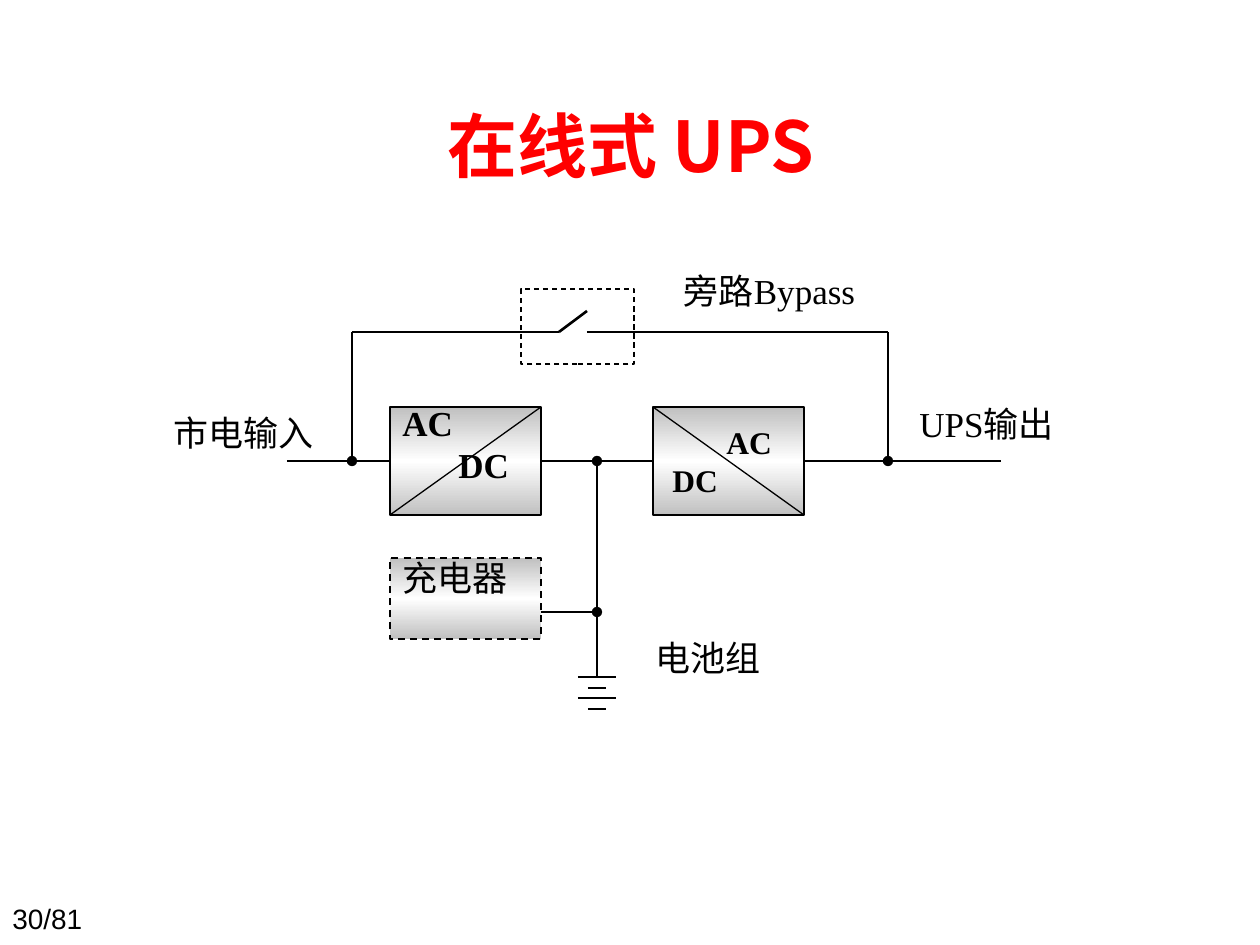
import copy
from dataclasses import dataclass

import pptx
import pptx.dml.color
import pptx.enum.dml
import pptx.enum.shapes
import pptx.enum.text
import pptx.oxml.ns
import pptx.oxml.xmlchemy
import pptx.util
from lxml import etree

EMU_PER_PX = 914400 / 126
ALIGN = pptx.enum.text.PP_ALIGN
ANCHOR = pptx.enum.text.MSO_ANCHOR
qn = pptx.oxml.ns.qn


@dataclass(frozen=True)
class Theme:
    """Colours, fonts, type sizes and line widths of the slide."""
    ink: str = "000000"
    title: str = "FF0000"
    shade: str = "C0C0C0"
    light: str = "FFFFFF"
    serif: str = "Times New Roman"
    sans: str = "Lato"
    cjk: str = "Noto Sans CJK SC"
    number: str = "Arial"
    title_size: int = 40
    label_size: int = 20
    inverter_size: int = 18
    number_size: int = 16
    thin: float = 0.75
    medium: float = 1
    thick: float = 1.5


THEME = Theme()


def px(value):
    """Turn pixels into EMU."""
    return pptx.util.Emu(round(value * EMU_PER_PX))


def color(value):
    """Return an RGB colour."""
    return pptx.dml.color.RGBColor.from_string(value)


def add_run(paragraph, text, font, size, bold=False, ink=THEME.ink):
    """Add one formatted run to a paragraph."""
    run = paragraph.add_run()
    run.text = text
    run.font.size = pptx.util.Pt(size)
    run.font.bold = bold
    run.font.color.rgb = color(ink)
    run.font.name = font
    east_asian = etree.SubElement(run.font._element, qn("a:ea"))
    east_asian.set("typeface", THEME.cjk)


def add_label(slide, box, runs, size=THEME.label_size, align=ALIGN.LEFT,
              anchor=ANCHOR.MIDDLE, wrap=True, **style):
    """Add a text box holding one paragraph of (text, font) runs."""
    frame = slide.shapes.add_textbox(*map(px, box)).text_frame
    frame.word_wrap = wrap
    frame.vertical_anchor = anchor
    paragraph = frame.paragraphs[0]
    paragraph.alignment = align
    for text, font in runs:
        add_run(paragraph, text, font, size, **style)


def style_line(line, width, dashed=False):
    """Set the colour, width and dash of a line."""
    line.color.rgb = color(THEME.ink)
    line.width = pptx.util.Pt(width)
    if dashed:
        line.dash_style = pptx.enum.dml.MSO_LINE.DASH


def add_wire(slide, start, end, width=THEME.thin, dot=None):
    """Add a straight wire, with a junction dot at headEnd or tailEnd."""
    connector = slide.shapes.add_connector(
        pptx.enum.shapes.MSO_CONNECTOR.STRAIGHT, *map(px, start + end))
    style_line(connector.line, width)
    properties = connector._element.spPr
    if dot:
        etree.SubElement(properties.find(qn("a:ln")), qn(f"a:{dot}")).set("type", "oval")
    etree.SubElement(properties, qn("a:effectLst"))


def fill_metallic(shape):
    """Fill a shape with a vertical grey, white, grey gradient."""
    shape.fill.gradient()
    shape.fill.gradient_angle = 270
    stop_list = shape._element.spPr.find(qn("a:gradFill")).find(qn("a:gsLst"))
    stop_list.append(copy.deepcopy(stop_list[0]))
    stops = ((0, THEME.shade), (0.5, THEME.light), (1, THEME.shade))
    for stop, (position, value) in zip(shape.fill.gradient_stops, stops):
        stop.position = position
        stop.color.rgb = color(value)


def add_block(slide, box, width, lines=(), size=THEME.label_size, bold=False,
              dashed=False, filled=True, bottom=6):
    """Add a rectangle with (text, indent) lines."""
    shape = slide.shapes.add_shape(
        pptx.enum.shapes.MSO_SHAPE.RECTANGLE, *map(px, box))
    shape.shadow.inherit = False
    if filled:
        fill_metallic(shape)
    else:
        shape.fill.background()
    style_line(shape.line, width, dashed)
    frame = shape.text_frame
    frame.vertical_anchor = ANCHOR.MIDDLE
    frame.margin_top = px(0 if bottom > 6 else 6)
    frame.margin_bottom = px(bottom)
    for index, (text, indent) in enumerate(lines):
        paragraph = frame.add_paragraph() if index else frame.paragraphs[0]
        paragraph.alignment = ALIGN.LEFT
        paragraph._p.get_or_add_pPr().set("marL", str(px(indent)))
        add_run(paragraph, text, THEME.serif, size, bold)


def add_battery(slide, center, top):
    """Add the four alternating plates of the battery."""
    plates = ((19, THEME.thin), (9, THEME.thick)) * 2
    for index, (half, width) in enumerate(plates):
        y = top + round(index * 10.7)
        add_wire(slide, (center - half, y), (center + half, y), width)


def add_circuit(slide):
    """Add the converters, bypass, charger and wires."""
    main_y, bypass_y, charger_y, battery_y = 461, 332, 612, 677
    input_x, bus_x, output_x = 352, 597, 888
    left, right, top, width, height = 390, 653, 407, 151, 108
    bottom = top + height

    add_block(slide, (left, top, width, height), THEME.thick,
              (("AC", 0), ("DC", 56)), bold=True, bottom=36)
    add_wire(slide, (left, bottom), (left + width, top))
    add_block(slide, (right, top, width, height), THEME.thick,
              (("AC", 61), ("DC", 7)), THEME.inverter_size, bold=True)
    add_wire(slide, (right + width, bottom), (right, top))

    for start, end in ((287, left), (left + width, right), (right + width, 1001)):
        add_wire(slide, (start, main_y), (end, main_y))
    for x in (input_x, output_x):
        add_wire(slide, (x, main_y), (x, bypass_y), dot="headEnd")

    add_wire(slide, (input_x, bypass_y), (559, bypass_y))
    add_wire(slide, (587, 311), (559, bypass_y), THEME.thick)
    add_wire(slide, (587, bypass_y), (output_x, bypass_y))
    add_block(slide, (521, 289, 113, 75), THEME.thin, dashed=True, filled=False)

    add_wire(slide, (bus_x, main_y), (bus_x, battery_y), dot="headEnd")
    add_block(slide, (left, 558, width, 81), THEME.medium, (("充电器", 0),),
              dashed=True, bottom=42)
    add_wire(slide, (left + width, charger_y), (bus_x, charger_y), dot="tailEnd")
    add_battery(slide, bus_x, battery_y)


def main():
    """Build the slide and save it."""
    presentation = pptx.Presentation()
    presentation.slide_width, presentation.slide_height = px(1260), px(945)
    slide = presentation.slides.add_slide(presentation.slide_layouts[6])

    add_label(slide, (0, 895, 112, 47), [("30/81", THEME.number)],
              THEME.number_size, anchor=ANCHOR.TOP, wrap=False)
    add_label(slide, (64, 66, 1134, 158), [("在线式 UPS", THEME.cjk)],
              THEME.title_size, ALIGN.CENTER, bold=True, ink=THEME.title)
    add_circuit(slide)
    add_label(slide, (144, 394, 200, 76), [("市电输入", THEME.sans)], align=ALIGN.CENTER)
    add_label(slide, (907, 386, 258, 76), [("UPS", THEME.serif), ("输出", THEME.sans)])
    add_label(slide, (582, 255, 375, 71),
              [("旁路", THEME.sans), ("Bypass", THEME.serif)], align=ALIGN.CENTER)
    add_label(slide, (643, 630, 146, 68), [("电池组", THEME.serif)], anchor=ANCHOR.TOP)
    presentation.save("out.pptx")


if __name__ == "__main__":
    main()
